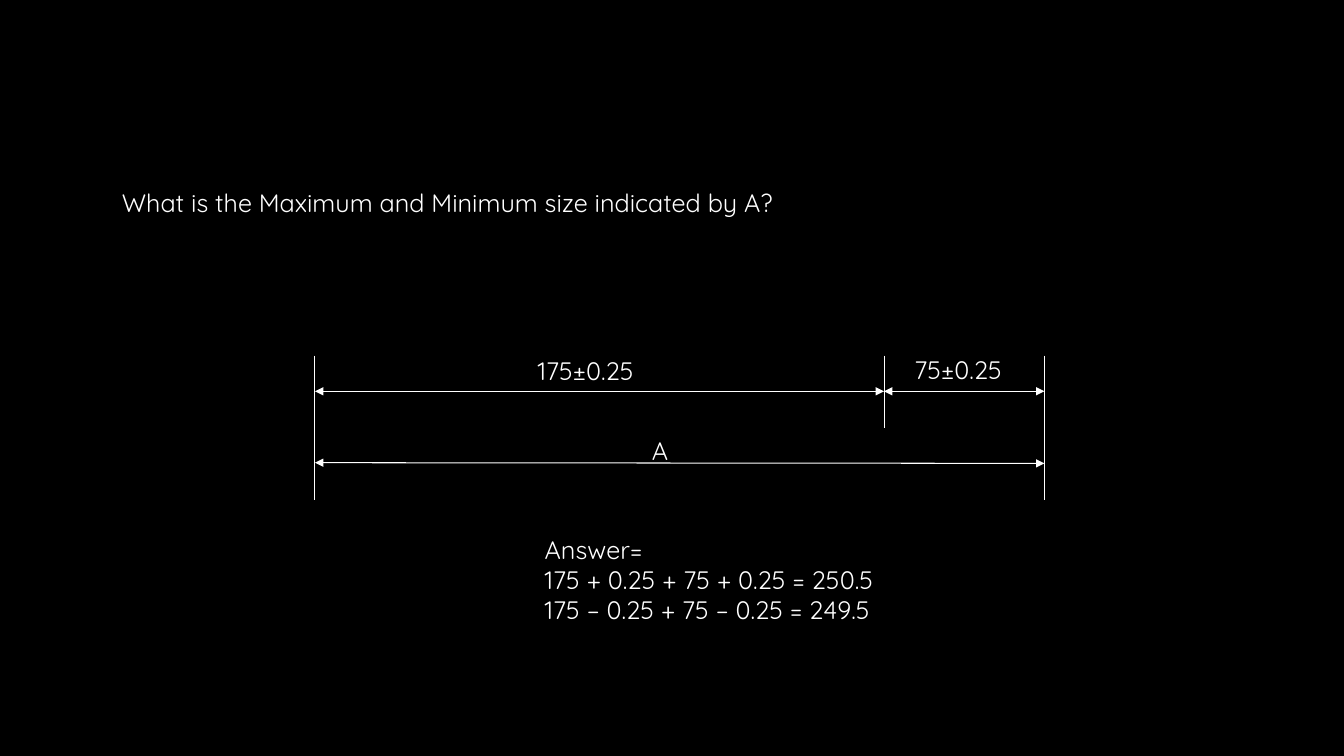
from lxml import etree
from pptx import Presentation
from pptx.dml.color import RGBColor
from pptx.enum.shapes import MSO_CONNECTOR
from pptx.enum.text import MSO_AUTO_SIZE
from pptx.oxml.ns import qn
from pptx.util import Pt

BLACK = RGBColor(0x00, 0x00, 0x00)
WHITE = RGBColor(0xFF, 0xFF, 0xFF)

deck = Presentation()
deck.slide_width, deck.slide_height = Pt(960), Pt(540)
page = deck.slides.add_slide(deck.slide_layouts[6])
page.background.fill.solid()
page.background.fill.fore_color.rgb = BLACK


def add_text(text, left, top, width, height):
    box = page.shapes.add_textbox(Pt(left), Pt(top), Pt(width), Pt(height))
    frame = box.text_frame
    frame.word_wrap = True
    frame.auto_size = MSO_AUTO_SIZE.SHAPE_TO_FIT_TEXT
    frame.text = text
    for para in frame.paragraphs:
        for span in para.runs:
            span.font.name = "Quicksand"
            span.font.size = Pt(18)
            span.font.color.rgb = WHITE


def add_line(x1, y1, x2, y2, arrows=False):
    line = page.shapes.add_connector(
        MSO_CONNECTOR.STRAIGHT, Pt(x1), Pt(y1), Pt(x2), Pt(y2))
    line.line.color.rgb = WHITE
    line.line.width = Pt(0.75)
    properties = line._element.spPr
    if arrows:
        outline = properties.find(qn("a:ln"))
        for end in ("a:headEnd", "a:tailEnd"):
            etree.SubElement(outline, qn(end)).set("type", "triangle")
    etree.SubElement(properties, qn("a:effectLst"))


# Edges of the measured part
left_edge, step_edge, right_edge = 225, 631.5, 746
upper_top, lower_top, extension = 254, 305.5, 51.8

# Extension lines
for x in (left_edge, step_edge, right_edge):
    add_line(x, upper_top, x, upper_top + extension)
for x in (left_edge, right_edge):
    add_line(x, lower_top, x, lower_top + extension)

# Dimension lines
for x1, y1, x2, y2 in (
    (left_edge, 279.5, step_edge, 279.5),
    (step_edge, 279.5, right_edge, 279.5),
    (left_edge, 330.5, right_edge, 331),
):
    add_line(x1, y1, x2, y2, arrows=True)

# Question, dimension labels and answer
add_text("What is the Maximum and Minimum size indicated by A?", 80, 130.5, 771, 29)
add_text("175±0.25", 377, 250.5, 104.5, 29)
add_text("75±0.25", 646, 249.5, 104.5, 29)
add_text("A", 458.5, 307.5, 42.5, 29)
add_text("Answer=\n175 + 0.25 + 75 + 0.25 = 250.5\n175 – 0.25 + 75 – 0.25 = 249.5",
         382, 378, 287, 72.5)

deck.save("out.pptx")
